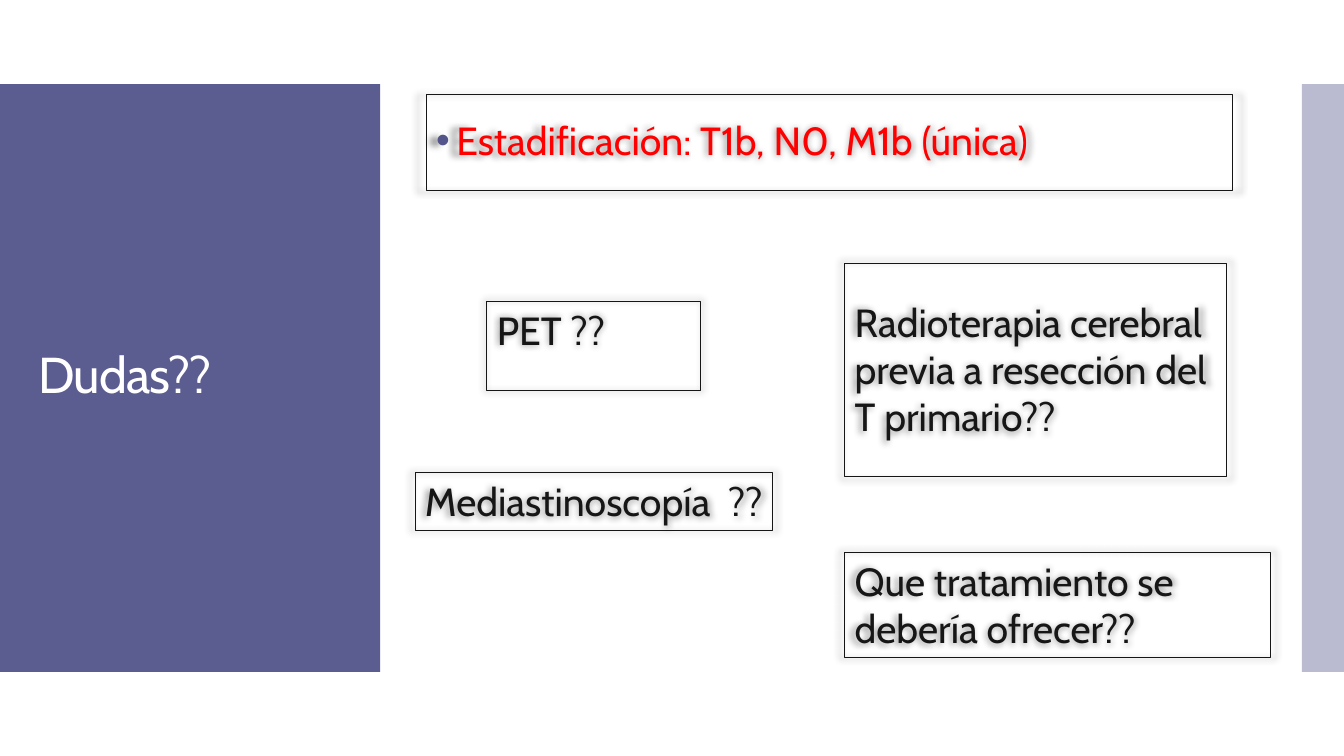
from lxml import etree
from pptx import Presentation
from pptx.dml.color import RGBColor
from pptx.enum.shapes import MSO_SHAPE
from pptx.enum.text import MSO_ANCHOR, PP_ALIGN
from pptx.oxml.ns import qn
from pptx.util import Cm, Pt

RECTANGLE = MSO_SHAPE.RECTANGLE
TOP, MIDDLE = MSO_ANCHOR.TOP, MSO_ANCHOR.MIDDLE
LEFT = PP_ALIGN.LEFT

# Content: boxes are left, top, width, height in centimetres
SLIDE_SIZE = (33.87, 19.05)
BAND_TOP, BAND_HEIGHT = 2.12, 14.81
BANDS = [  # left, width, opacity in percent
    (0, 9.58, 95),
    (32.81, 1.06, 40),
]
TITLE = ("Dudas??", (0.71, 3.12, 8.18, 12.78))
STAGING = ("Estadificación: T1b, N0, M1b (única)", (10.74, 2.39, 20.32, 2.41))
RIGHT_COLUMN = 21.29
QUESTIONS = [  # text, box, top inset, wrap
    ("PET ??", (12.27, 7.59, 5.38, 2.24), 0.13, True),
    ("Mediastinoscopía  ??", (10.46, 11.91, 9.02, 1.45), 0.13, False),
    ("Radioterapia cerebral previa a resección del T primario??",
     (RIGHT_COLUMN, 6.63, 9.63, 5.38), 0.89, True),
    ("Que tratamiento se debería ofrecer??",
     (RIGHT_COLUMN, 13.92, 10.74, 2.64), 0.13, True),
]

THEME = {
    "font": "Cabin",
    "accent": RGBColor(0x53, 0x54, 0x8A),
    "ink": RGBColor(0x16, 0x16, 0x16),
    "red": RGBColor(0xFF, 0x00, 0x00),
    "white": RGBColor(0xFF, 0xFF, 0xFF),
    "title_size": Pt(36),
    "body_size": Pt(28),
    "line_width": Pt(0.75),
}


def add_xml(parent, tag, **attributes):
    return etree.SubElement(parent, qn(tag), attributes)


def add_rectangle(slide, box):
    shape = slide.shapes.add_shape(RECTANGLE, *map(Cm, box))
    shape.shadow.inherit = False
    return shape


def add_band(slide, left, width, opacity):
    shape = add_rectangle(slide, (left, BAND_TOP, width, BAND_HEIGHT))
    shape.fill.solid()
    shape.fill.fore_color.rgb = THEME["accent"]
    shape.line.fill.background()
    color = shape.element.spPr.find(f".//{qn('a:srgbClr')}")
    add_xml(color, "a:alpha", val=str(opacity * 1000))


def write_text(shape, text, size, color, frame_format, paragraph_format):
    frame = shape.text_frame
    for name, value in frame_format.items():
        setattr(frame, name, value)
    paragraph = frame.paragraphs[0]
    for name, value in {"alignment": LEFT, **paragraph_format}.items():
        setattr(paragraph, name, value)
    run = paragraph.add_run()
    run.text = text
    for name, value in {"name": THEME["font"], "size": size}.items():
        setattr(run.font, name, value)
    run.font.color.rgb = color
    return paragraph


def add_outlined_box(slide, box):
    shape = add_rectangle(slide, box)
    shape.fill.background()
    shape.line.color.rgb = THEME["ink"]
    shape.line.width = THEME["line_width"]
    effects = shape.element.spPr.find(qn("a:effectLst"))
    shadow = add_xml(effects, "a:outerShdw", blurRad=str(Pt(5)), sx="102000",
                     sy="102000", algn="ctr", rotWithShape="0")
    color = add_xml(shadow, "a:srgbClr", val="000000")
    add_xml(color, "a:alpha", val="40000")
    return shape


def add_bullet(paragraph):
    indent = Cm(0.51)
    properties = paragraph._p.get_or_add_pPr()
    properties.set("marL", str(indent))
    properties.set("indent", str(-indent))
    bullet_color = add_xml(properties, "a:buClr")
    add_xml(bullet_color, "a:srgbClr", val=str(THEME["accent"]))
    add_xml(properties, "a:buFont", typeface="Arial")
    add_xml(properties, "a:buChar", char="•")


def main():
    presentation = Presentation()
    presentation.slide_width, presentation.slide_height = map(Cm, SLIDE_SIZE)
    slide = presentation.slides.add_slide(presentation.slide_layouts[6])

    # Side bands
    for band in BANDS:
        add_band(slide, *band)

    # Title
    text, box = TITLE
    title = slide.shapes.add_textbox(*map(Cm, box))
    paragraph = write_text(title, text, THEME["title_size"], THEME["white"],
                           {"word_wrap": True, "vertical_anchor": MIDDLE},
                           {"line_spacing": 0.9})
    paragraph.runs[0]._r.get_or_add_rPr().set("spc", "-60")

    # Staging line
    text, box = STAGING
    staging = add_outlined_box(slide, box)
    paragraph = write_text(staging, text, THEME["body_size"], THEME["red"],
                           {"word_wrap": True, "vertical_anchor": MIDDLE},
                           {"line_spacing": 0.9})
    add_bullet(paragraph)

    # Open questions
    for text, box, inset, wrap in QUESTIONS:
        question = add_outlined_box(slide, box)
        write_text(question, text, THEME["body_size"], THEME["ink"],
                   {"word_wrap": wrap, "vertical_anchor": TOP,
                    "margin_top": Cm(inset)}, {})

    presentation.save("out.pptx")


if __name__ == "__main__":
    main()
